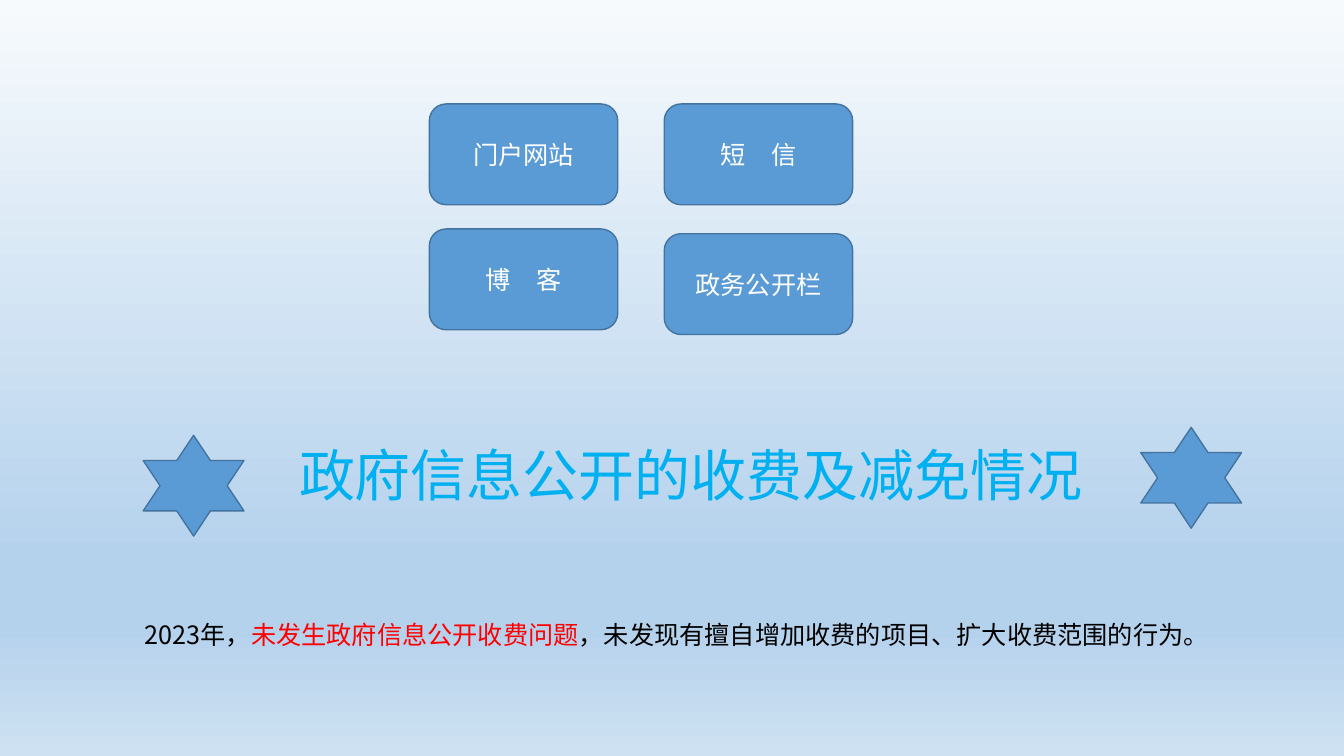
"""Build the slide on disclosure channels and on fees for public information."""
from lxml.etree import SubElement
from pptx import Presentation
from pptx.dml.color import RGBColor
from pptx.enum.shapes import MSO_SHAPE
from pptx.enum.text import MSO_ANCHOR, MSO_AUTO_SIZE, PP_ALIGN
from pptx.oxml.ns import qn
from pptx.util import Cm, Pt

BLUE = RGBColor(0x5B, 0x9B, 0xD5)
EDGE = RGBColor(0x43, 0x73, 0x9E)
WHITE = RGBColor(0xFF, 0xFF, 0xFF)
CYAN = RGBColor(0x00, 0xB0, 0xF0)
BLACK = RGBColor(0x00, 0x00, 0x00)
RED = RGBColor(0xFF, 0x00, 0x00)
SKY = [(0, RGBColor(0xF7, 0xFA, 0xFD)), (74, RGBColor(0xB5, 0xD2, 0xEC)),
       (83, RGBColor(0xB5, 0xD2, 0xEC)), (100, RGBColor(0xCE, 0xE1, 0xF2))]
HAN = "Noto Sans CJK SC"

CARDS = [
    (10.82, [("门户网站", 2.62), ("博　客", 5.77)]),
    (16.74, [("短　信", 2.62), ("政务公开栏", 5.89)]),
]
STARS = [(3.61, 10.97), (28.75, 10.77)]
TITLE = [("政府信息公开的收费及减免情况", CYAN)]
NOTE = [
    ("2023年，", BLACK),
    ("未发生政府信息公开收费问题", RED),
    ("，未发现有擅自增加收费的项目、扩大收费范围的行为。", BLACK),
]


def paint(slide):
    fill = slide.background.fill
    fill.gradient()
    fill.gradient_angle = 270
    stops = next(slide.element.iter(qn("a:gsLst")))
    for stop in list(stops):
        stops.remove(stop)
    for spot, tone in SKY:
        stop = SubElement(stops, qn("a:gs"), pos=str(spot * 1000))
        SubElement(stop, qn("a:srgbClr"), val=str(tone))


def write(frame, runs, size, face, align):
    frame.word_wrap = True
    para = frame.paragraphs[0]
    para.alignment = align
    for text, tone in runs:
        run = para.add_run()
        run.text = text
        run.font.size = Pt(size)
        run.font.name = face
        run.font.color.rgb = tone
        SubElement(run.font._element, qn("a:ea"), typeface=HAN)


def draw(slide, kind, left, top, width, height):
    shape = slide.shapes.add_shape(kind, Cm(left), Cm(top), Cm(width), Cm(height))
    shape.shadow.inherit = False
    shape.fill.solid()
    shape.fill.fore_color.rgb = BLUE
    shape.line.color.rgb = EDGE
    shape.line.width = Pt(1)
    return shape


def label(slide, left, top, width, height, runs, size, face, align):
    box = slide.shapes.add_textbox(Cm(left), Cm(top), Cm(width), Cm(height))
    write(box.text_frame, runs, size, face, align)
    box.text_frame.auto_size = MSO_AUTO_SIZE.SHAPE_TO_FIT_TEXT


def main():
    deck = Presentation()
    deck.slide_width, deck.slide_height = Cm(33.87), Cm(19.05)
    slide = deck.slides.add_slide(deck.slide_layouts[6])
    paint(slide)
    for left, column in CARDS:
        for text, top in column:
            card = draw(slide, MSO_SHAPE.ROUNDED_RECTANGLE, left, top, 4.75, 2.54)
            card.text_frame.vertical_anchor = MSO_ANCHOR.MIDDLE
            write(card.text_frame, [(text, WHITE)], 18, "Calibri", PP_ALIGN.CENTER)
    label(slide, 1.96, 10.97, 30.89, 1.96, TITLE, 40, "Arial", PP_ALIGN.CENTER)
    label(slide, 3.4, 15.49, 27.58, 1.02, NOTE, 18, HAN, PP_ALIGN.LEFT)
    for left, top in STARS:
        draw(slide, MSO_SHAPE.STAR_6_POINT, left, top, 2.54, 2.54)
    deck.save("out.pptx")


if __name__ == "__main__":
    main()
